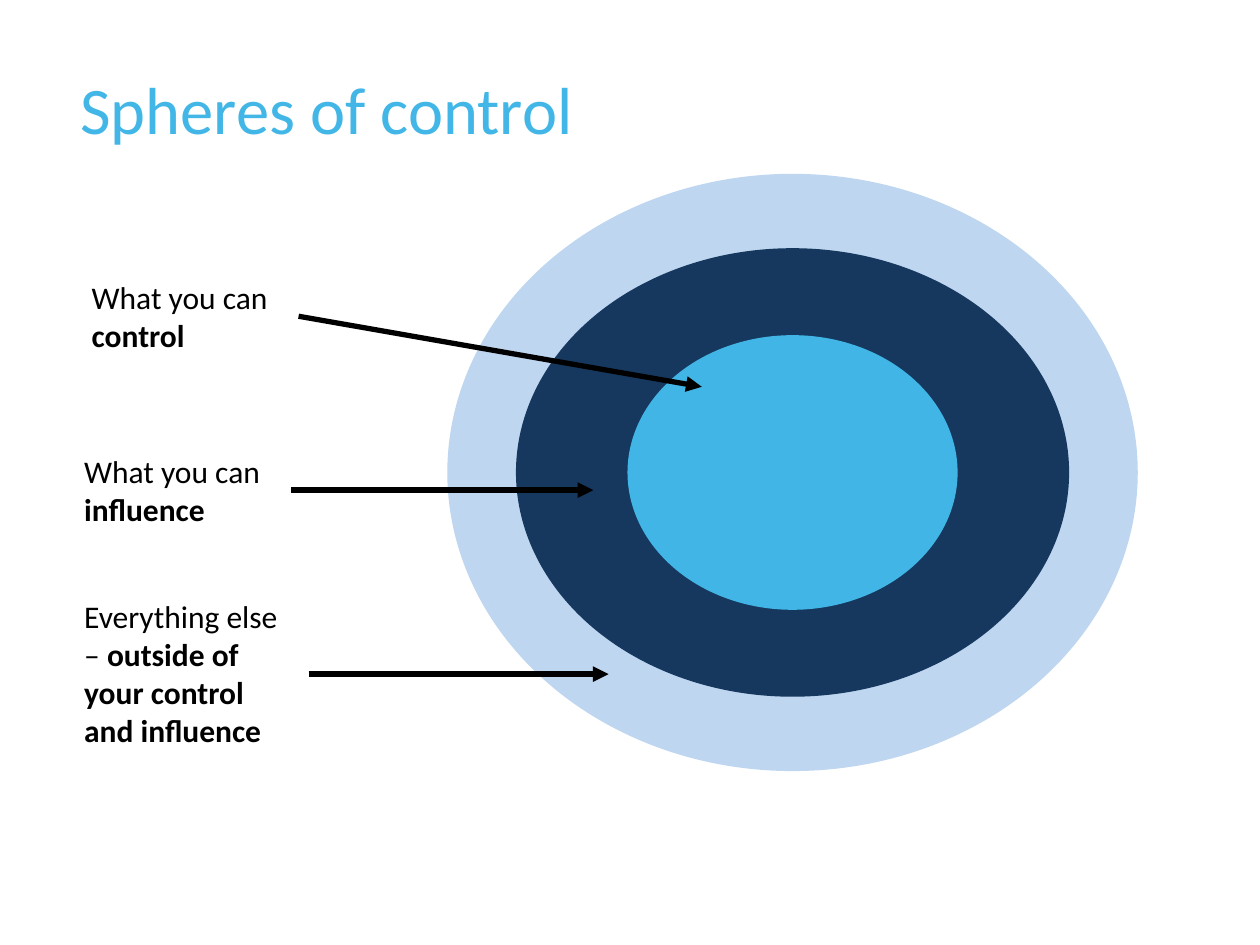
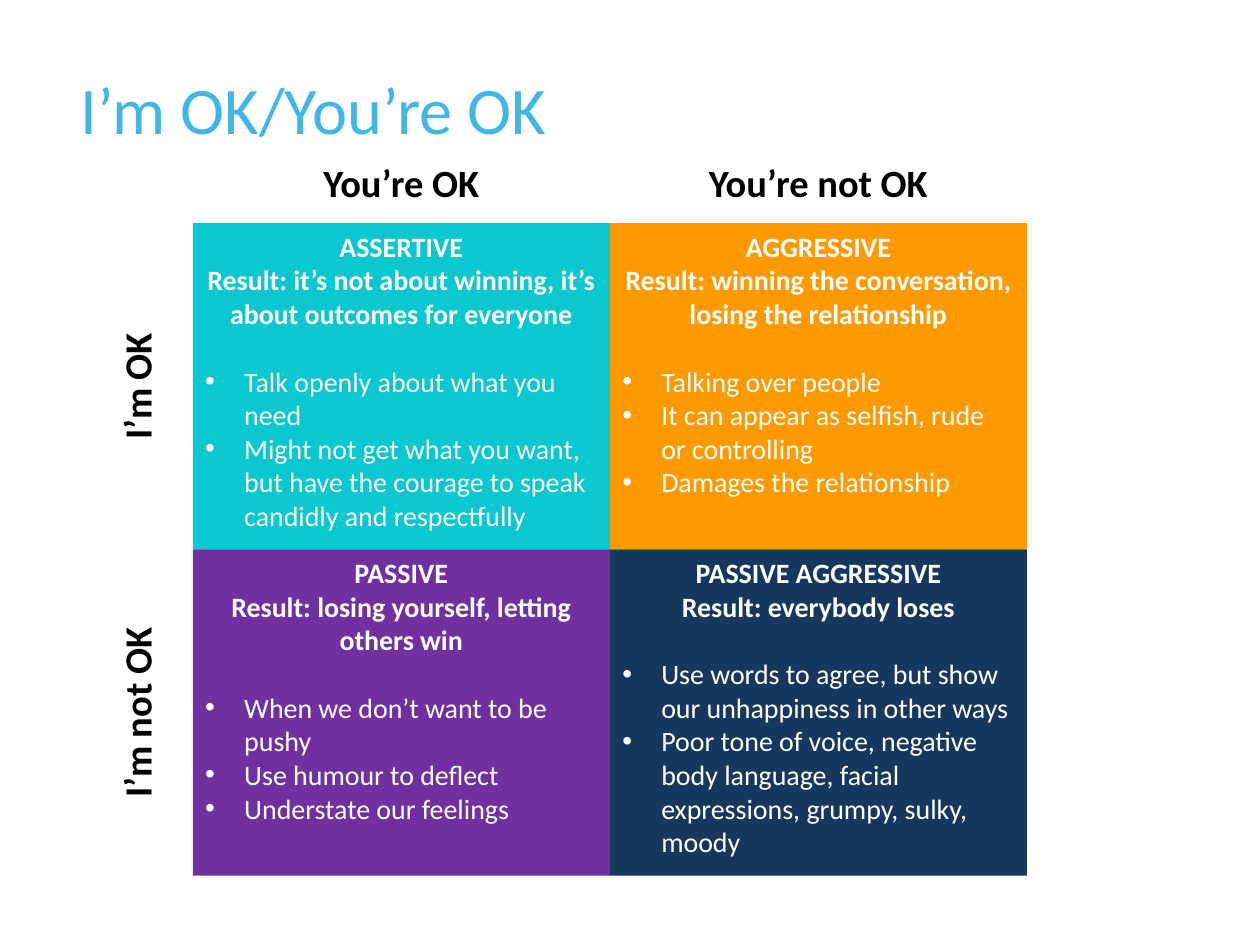
from lxml import etree
from pptx import Presentation
from pptx.dml.color import RGBColor
from pptx.enum.shapes import MSO_CONNECTOR, MSO_SHAPE
from pptx.enum.text import PP_ALIGN
from pptx.oxml.ns import qn
from pptx.util import Inches, Pt

CENTER, LEFT = PP_ALIGN.CENTER, PP_ALIGN.LEFT
RING, RECT = MSO_SHAPE.FLOWCHART_CONNECTOR, MSO_SHAPE.RECTANGLE
STRAIGHT = MSO_CONNECTOR.STRAIGHT
FONT = "Calibri"
COLORS = {
    "title": "42B6E6", "text": "000000", "white": "FFFFFF",
    "pale": "BFD6F0", "navy": "16385E", "sky": "41B6E6",
    "teal": "0AC7D0", "orange": "FF9900", "purple": "7030A0",
}


def add_text(slide, area, lines, size, color="text", align=LEFT):
    """Add a text box; each line is a list of (text, bold) runs."""
    box = slide.shapes.add_textbox(*[Inches(n) for n in area])
    frame = box.text_frame
    frame.word_wrap = True
    for i, line in enumerate(lines):
        para = frame.paragraphs[0] if i == 0 else frame.add_paragraph()
        para.alignment = align
        for text, bold in line:
            run = para.add_run()
            run.text = text
            run.font.name = FONT
            run.font.size = Pt(size)
            run.font.bold = bold
            run.font.color.rgb = RGBColor.from_string(COLORS[color])
    return box


def add_block(slide, kind, area, color):
    block = slide.shapes.add_shape(kind, *[Inches(n) for n in area])
    block.shadow.inherit = False
    block.fill.solid()
    block.fill.fore_color.rgb = RGBColor.from_string(COLORS[color])
    block.line.fill.background()


deck = Presentation()
deck.slide_width, deck.slide_height = Inches(10), Inches(7.5)
slides = []
for title in ["Spheres of control", "I’m OK/You’re OK"]:
    slide = deck.slides.add_slide(deck.slide_layouts[6])
    box = add_text(slide, (0.54, 0.56, 7.9, 1.03), [[(title, False)]], 38, "title")
    box.text_frame.paragraphs[0].line_spacing = 0.9
    slides.append(slide)
spheres, matrix = slides

# Spheres: rings around one centre, each with a label and an arrow
MID_X, MID_Y = 6.29, 3.75
for wide, high, color in [(5.48, 4.74, "pale"), (4.39, 3.56, "navy"), (2.62, 2.18, "sky")]:
    add_block(spheres, RING, (MID_X - wide / 2, MID_Y - high / 2, wide, high), color)

# label area, plain words, bold words, arrow start, arrow end, joined to label
labels = [
    ((0.63, 2.16, 1.74, 0.7), "What you can ", "control", (2.37, 2.51), (5.57, 3.07), True),
    ((0.57, 3.54, 1.74, 0.7), "What you can ", "influence", (2.31, 3.89), (4.71, 3.89), True),
    ((0.57, 4.69, 1.74, 1.31), "Everything else – ", "outside of your control and influence",
     (2.45, 5.35), (4.83, 5.35), False),
]
for area, plain, strong, start, end, joined in labels:
    box = add_text(spheres, area, [[(plain, False), (strong, True)]], 18)
    arrow = spheres.shapes.add_connector(STRAIGHT, *[Inches(n) for n in start + end])
    if joined:
        arrow.begin_connect(box, 3)
    arrow.line.color.rgb = RGBColor.from_string(COLORS["text"])
    arrow.line.width = Pt(3)
    etree.SubElement(arrow.line._get_or_add_ln(), qn("a:tailEnd"), type="triangle")
    etree.SubElement(arrow._element.spPr, qn("a:effectLst"))

# Matrix: two by two cells with headings above and at the side
GRID_X, GRID_Y, CELL_W, CELL_H = 1.53, 1.77, 3.31, 2.59
HEAD_W, HEAD_H = 2.37, 0.47
for i, head in enumerate(["You’re OK", "You’re not OK"]):
    left = GRID_X + (i + 0.5) * CELL_W - HEAD_W / 2
    add_text(matrix, (left, 1.21, HEAD_W, HEAD_H), [[(head, True)]], 22, align=CENTER)
for i, head in enumerate(["I’m OK", "I’m not OK"]):
    top = GRID_Y + (i + 0.5) * CELL_H - HEAD_H / 2
    box = add_text(matrix, (-0.1, top, HEAD_W, HEAD_H), [[(head, True)]], 22, align=CENTER)
    box.rotation = 270

# column, row, colour, style, result, points
cells = [
    (0, 0, "teal", "ASSERTIVE", "Result: it’s not about winning, it’s about outcomes for everyone",
     ["Talk openly about what you need",
      "Might not get what you want, but have the courage to speak candidly and respectfully"]),
    (1, 0, "orange", "AGGRESSIVE", "Result: winning the conversation, losing the relationship",
     ["Talking over people", "It can appear as selfish, rude or controlling",
      "Damages the relationship"]),
    (0, 1, "purple", "PASSIVE", "Result: losing yourself, letting others win",
     ["When we don’t want to be pushy", "Use humour to deflect", "Understate our feelings"]),
    (1, 1, "navy", "PASSIVE AGGRESSIVE", "Result: everybody loses",
     ["Use words to agree, but show our unhappiness in other ways",
      "Poor tone of voice, negative body language, facial expressions, grumpy, sulky, moody"]),
]
for col, row, color, style, result, points in cells:
    area = (GRID_X + col * CELL_W, GRID_Y + row * CELL_H, CELL_W, CELL_H)
    add_block(matrix, RECT, area, color)
    lines = [[(style, True)], [(result, True)]] + [[(point, False)] for point in points]
    box = add_text(matrix, area, lines, 16, "white")
    paras = box.text_frame.paragraphs
    for para in paras[:2]:
        para.alignment = CENTER
    for para in paras[2:]:
        props = para._p.get_or_add_pPr()
        props.set("marL", str(Inches(0.31)))
        props.set("indent", str(-Inches(0.31)))
        etree.SubElement(props, qn("a:buFont"), typeface="Arial")
        etree.SubElement(props, qn("a:buChar"), char="•")
    paras[2].space_before = Pt(19.5)

deck.save("out.pptx")
